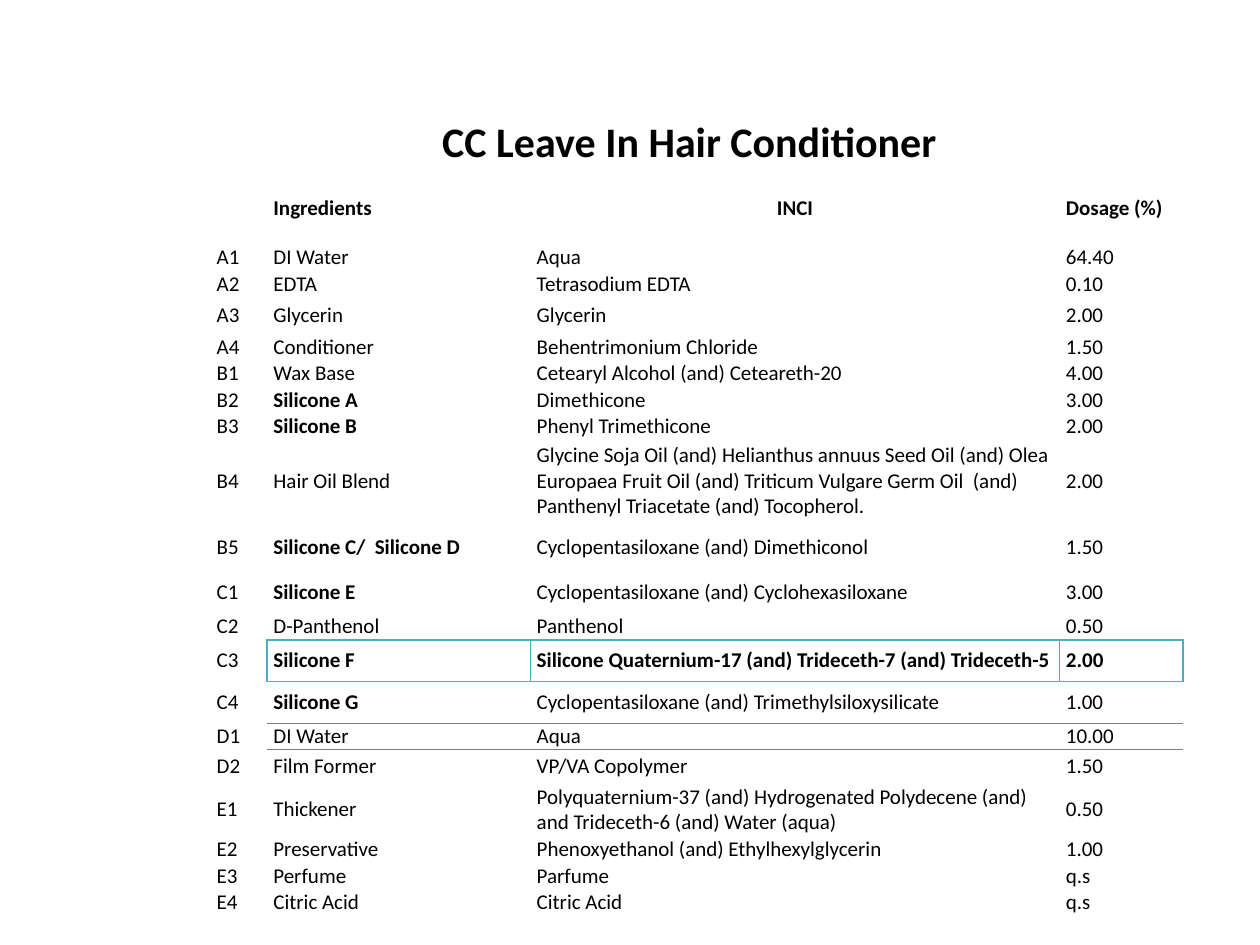
from dataclasses import dataclass

from lxml.etree import SubElement
from pptx import Presentation
from pptx.dml.color import RGBColor
from pptx.enum.text import MSO_ANCHOR as Anchor, MSO_AUTO_SIZE as AutoSize, PP_ALIGN as Align
from pptx.oxml.ns import qn
from pptx.util import Inches, Pt


@dataclass(frozen=True)
class Theme:
    font: str = "Calibri"
    text: str = "000000"
    accent: str = "4BACC6"
    rule: str = "7F7F7F"
    title_size: float = 24
    body_size: float = 12
    accent_width: float = 1
    rule_width: float = 0.5


THEME = Theme()
PLAIN_STYLE = "{2D5ABB26-0587-4C30-8999-92F81FD0307C}"
COLUMN_WIDTHS = (0.45, 2.09, 4.2, 0.98)
HEADER = ("", "Ingredients", "INCI", "Dosage (%)")
HEADER_HEIGHT = 0.57
ROW_HEIGHT = 0.21
TALL_ROWS = {"A3": 0.29, "B4": 0.66, "B5": 0.39, "C1": 0.33, "C3": 0.33,
             "C4": 0.33, "D2": 0.27, "E1": 0.42}
HOUSE_RANGE = "Silicone"
HIGHLIGHT = "C3"
RULED = "C4"

FORMULA = [
    ("A1", "DI Water", "Aqua", "64.40"),
    ("A2", "EDTA", "Tetrasodium EDTA", "0.10"),
    ("A3", "Glycerin", "Glycerin", "2.00"),
    ("A4", "Conditioner", "Behentrimonium Chloride", "1.50"),
    ("B1", "Wax Base", "Cetearyl Alcohol (and) Ceteareth-20", "4.00"),
    ("B2", "Silicone A", "Dimethicone", "3.00"),
    ("B3", "Silicone B", "Phenyl Trimethicone", "2.00"),
    ("B4", "Hair Oil Blend",
     "Glycine Soja Oil (and) Helianthus annuus Seed Oil (and) Olea Europaea Fruit Oil (and) "
     "Triticum Vulgare Germ Oil  (and) Panthenyl Triacetate (and) Tocopherol.", "2.00"),
    ("B5", "Silicone C/  Silicone D", "Cyclopentasiloxane (and) Dimethiconol", "1.50"),
    ("C1", "Silicone E", "Cyclopentasiloxane (and) Cyclohexasiloxane", "3.00"),
    ("C2", "D-Panthenol", "Panthenol", "0.50"),
    ("C3", "Silicone F", "Silicone Quaternium-17 (and) Trideceth-7 (and) Trideceth-5", "2.00"),
    ("C4", "Silicone G", "Cyclopentasiloxane (and) Trimethylsiloxysilicate", "1.00"),
    ("D1", "DI Water", "Aqua", "10.00"),
    ("D2", "Film Former", "VP/VA Copolymer", "1.50"),
    ("E1", "Thickener",
     "Polyquaternium-37 (and) Hydrogenated Polydecene (and) and Trideceth-6 (and) Water (aqua)",
     "0.50"),
    ("E2", "Preservative", "Phenoxyethanol (and) Ethylhexylglycerin", "1.00"),
    ("E3", "Perfume", "Parfume", "q.s"),
    ("E4", "Citric Acid", "Citric Acid", "q.s"),
]


def add_run(p, text, size, bold):
    r = p.add_run()
    r.text = text
    r.font.name = THEME.font
    r.font.size = Pt(size)
    r.font.bold = bold
    r.font.color.rgb = RGBColor.from_string(THEME.text)


def add_title(slide, text, left, top, width, height):
    sp = slide.shapes.title
    sp.left, sp.top, sp.width, sp.height = map(Inches, (left, top, width, height))
    tf = sp.text_frame
    tf.auto_size = AutoSize.NONE
    tf.word_wrap = True
    tf.vertical_anchor = Anchor.TOP
    p = tf.paragraphs[0]
    p.alignment = Align.LEFT
    add_run(p, text, THEME.title_size, True)


def add_borders(cell, sides, color, width):
    """Draw the named sides, given in schema order: L, R, T, B."""
    tc_pr = cell._tc.get_or_add_tcPr()
    for side in sides:
        ln = SubElement(tc_pr, qn(f"a:ln{side}"), w=str(Pt(width)))
        fill = SubElement(ln, qn("a:solidFill"))
        SubElement(fill, qn("a:srgbClr"), val=color)


def border_cell(cell, code, col, above):
    """Box the highlighted row and rule off the one below it."""
    accent = (THEME.accent, THEME.accent_width)
    if code == HIGHLIGHT:
        add_borders(cell, ("R", "LRTB", "LTB", "RTB")[col], *accent)
    elif col and above == HIGHLIGHT:
        add_borders(cell, "T", *accent)
    if col and code == RULED:
        add_borders(cell, "B", THEME.rule, THEME.rule_width)
    elif col and above == RULED:
        add_borders(cell, "T", THEME.rule, THEME.rule_width)


def fill_cell(cell, text, bold, align):
    cell.fill.background()
    cell.vertical_anchor = Anchor.MIDDLE
    cell.margin_left = cell.margin_right = Inches(0.05)
    cell.margin_top = cell.margin_bottom = 0
    p = cell.text_frame.paragraphs[0]
    p.alignment = align
    if text:
        add_run(p, text, THEME.body_size, bold)


def is_bold(code, col, row):
    if not code:
        return True
    if code == HIGHLIGHT:
        return col > 0
    return col == 1 and row[1].startswith(HOUSE_RANGE)


def add_formula_table(slide, left, top):
    rows = [HEADER] + FORMULA
    heights = [HEADER_HEIGHT] + [TALL_ROWS.get(row[0], ROW_HEIGHT) for row in FORMULA]
    frame = slide.shapes.add_table(len(rows), len(HEADER), Inches(left), Inches(top),
                                   Inches(sum(COLUMN_WIDTHS)), Inches(sum(heights)))
    table = frame.table
    table.first_row = table.horz_banding = False
    table._tbl.tblPr.find(qn("a:tableStyleId")).text = PLAIN_STYLE
    for column, width in zip(table.columns, COLUMN_WIDTHS):
        column.width = Inches(width)
    above = None
    for i, (row, height) in enumerate(zip(rows, heights)):
        table.rows[i].height = Inches(height)
        code = row[0]
        for col, text in enumerate(row):
            cell = table.cell(i, col)
            border_cell(cell, code, col, above)
            align = Align.CENTER if text == "INCI" else Align.LEFT
            fill_cell(cell, text, is_bold(code, col, row), align)
        above = code


def main():
    prs = Presentation()
    prs.slide_width, prs.slide_height = Inches(10), Inches(7.5)
    slide = prs.slides.add_slide(prs.slide_layouts[5])
    add_formula_table(slide, 1.67, 1.37)
    add_title(slide, "CC Leave In Hair Conditioner", 3.41, 0.87, 4.25, 0.5)
    prs.save("out.pptx")


if __name__ == "__main__":
    main()
